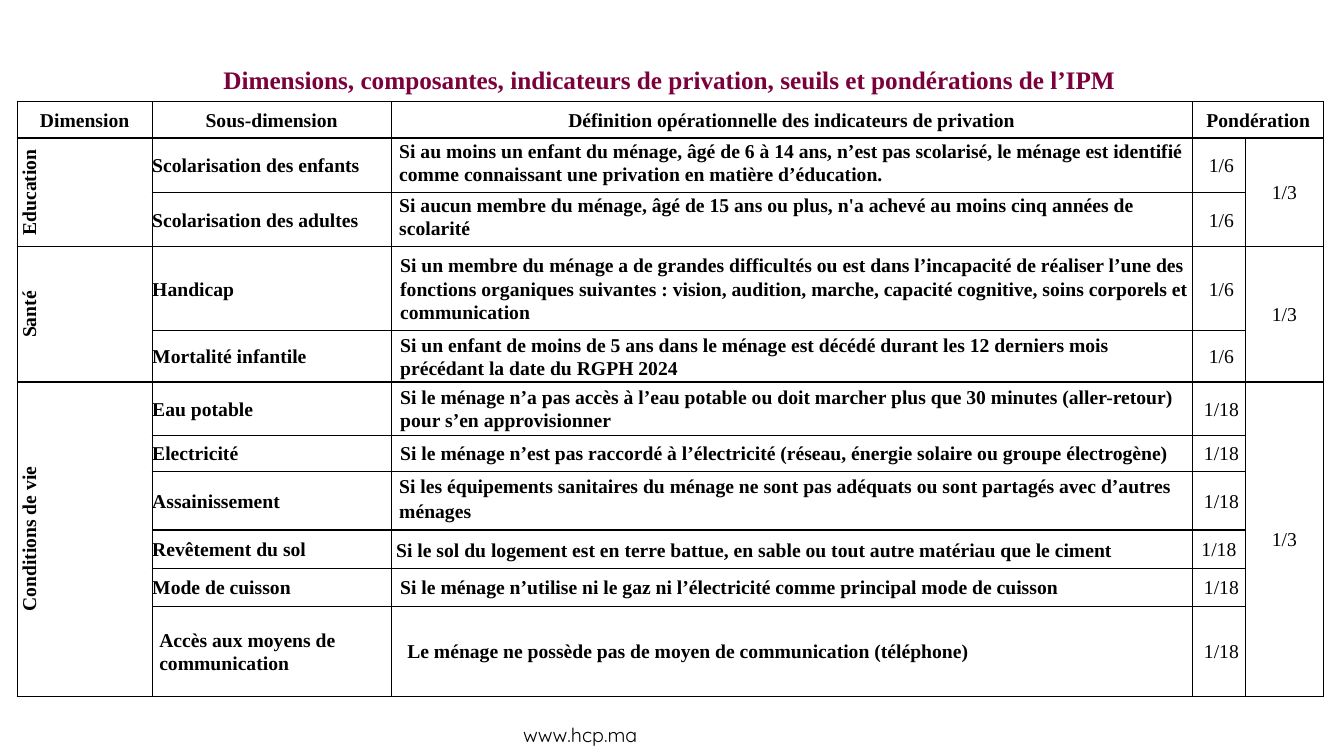
from lxml import etree
from pptx import Presentation
from pptx.dml.color import RGBColor
from pptx.enum.text import MSO_ANCHOR, PP_ALIGN
from pptx.oxml.ns import qn
from pptx.util import Pt

PX = 9144  # 100 px to the inch
LEFT, CENTER = PP_ALIGN.LEFT, PP_ALIGN.CENTER
TOP, MIDDLE = MSO_ANCHOR.TOP, MSO_ANCHOR.MIDDLE
COLORS = {"ink": "000000", "paper": "FFFFFF", "title": "7B003B"}
SERIF, SANS = "Times New Roman", "Quicksand"

COLS = [134, 237, 795, 52, 78]
ROWS = [36, 54, 54, 83, 51, 53, 36, 58, 38, 38, 89]
HEADS = ["Dimension", "Sous-dimension",
         "Définition opérationnelle des indicateurs de privation", "Pondération"]

# Definition cell styles: anchor, margins (left, top, right, bottom), line spacing
HIGH = (TOP, (8, 1, 8, 0), 1.07)
WIDE = (TOP, (8, 1, 8, 0), 1.15)
MID = (MIDDLE, (9, 0, 0, 0), 1.07)
FLOOR = (MIDDLE, (5, 0, 0, 0), 1.15)
LAST = (MIDDLE, (16, 0, 7, 0), 1.07)

# Dimension, weight of each indicator, indicators (name, definition, style)
GROUPS = [
    ("Education", "1/6", [
        ("Scolarisation des enfants",
         "Si au moins un enfant du ménage, âgé de 6 à 14 ans, n’est pas scolarisé, le ménage "
         "est identifié comme connaissant une privation en matière d’éducation.", HIGH),
        ("Scolarisation des adultes",
         "Si aucun membre du ménage, âgé de 15 ans ou plus, n'a achevé au moins cinq années "
         "de scolarité", HIGH),
    ]),
    ("Santé", "1/6", [
        ("Handicap",
         "Si un membre du ménage a de grandes difficultés ou est dans l’incapacité de réaliser "
         "l’une des fonctions organiques suivantes : vision, audition, marche, capacité "
         "cognitive, soins corporels et communication", MID),
        ("Mortalité infantile",
         "Si un enfant de moins de 5 ans dans le ménage est décédé durant les 12 derniers mois "
         "précédant la date du RGPH 2024", MID),
    ]),
    ("Conditions de vie", "1/18", [
        ("Eau potable",
         "Si le ménage n’a pas accès à l’eau potable ou doit marcher plus que 30 minutes "
         "(aller-retour) pour s’en approvisionner", MID),
        ("Electricité",
         "Si le ménage n’est pas raccordé à l’électricité (réseau, énergie solaire ou groupe "
         "électrogène)", MID),
        ("Assainissement",
         "Si les équipements sanitaires du ménage ne sont pas adéquats ou sont partagés avec "
         "d’autres ménages", WIDE),
        ("Revêtement du sol",
         "Si le sol du logement est en terre battue, en sable ou tout autre matériau que le "
         "ciment", FLOOR),
        ("Mode de cuisson",
         "Si le ménage n’utilise ni le gaz ni l’électricité comme principal mode de cuisson",
         MID),
        ("Accès aux moyens de communication",
         "Le ménage ne possède pas de moyen de communication (téléphone)", LAST),
    ]),
]


def style(para, size, face, color, bold, align):
    para.alignment = align
    font = para.font
    font.size, font.name, font.bold = Pt(size), face, bold
    font.color.rgb = RGBColor.from_string(COLORS[color])


def label(slide, box, text, size, face, color, bold, align):
    frame = slide.shapes.add_textbox(*[n * PX for n in box]).text_frame
    frame.word_wrap = True
    frame.vertical_anchor = MIDDLE
    frame.text = text
    style(frame.paragraphs[0], size, face, color, bold, align)


def border(cell):
    props = cell._tc.get_or_add_tcPr()
    for n, side in enumerate(("lnL", "lnR", "lnT", "lnB")):
        line = etree.Element(qn("a:" + side), w=str(Pt(1)))
        fill = etree.SubElement(line, qn("a:solidFill"))
        etree.SubElement(fill, qn("a:srgbClr"), val=COLORS["ink"])
        props.insert(n, line)


def write(cell, text, align=CENTER, bold=True, look=(MIDDLE, (0, 0, 0, 0), 1.07)):
    anchor, pads, space = look
    cell.text = text
    cell.vertical_anchor = anchor
    (cell.margin_left, cell.margin_top,
     cell.margin_right, cell.margin_bottom) = [n * PX for n in pads]
    para = cell.text_frame.paragraphs[0]
    para.line_spacing = space
    style(para, 14, SERIF, "ink", bold, align)


def grid(slide, left, top):
    size = [n * PX for n in (left, top, sum(COLS), sum(ROWS))]
    table = slide.shapes.add_table(len(ROWS), len(COLS), *size).table
    table.first_row = table.horz_banding = False
    for col, width in zip(table.columns, COLS):
        col.width = width * PX
    for row, height in zip(table.rows, ROWS):
        row.height = height * PX
    for cell in table.iter_cells():
        cell.fill.solid()
        cell.fill.fore_color.rgb = RGBColor.from_string(COLORS["paper"])
        border(cell)

    # Header row
    table.cell(0, 3).merge(table.cell(0, 4))
    for n, head in enumerate(HEADS):
        write(table.cell(0, n), head)

    # One block of rows per dimension
    row = 1
    for name, weight, items in GROUPS:
        end = row + len(items) - 1
        for col in (0, 4):
            table.cell(row, col).merge(table.cell(end, col))
        side = table.cell(row, 0)
        write(side, name)
        side._tc.get_or_add_tcPr().set("vert", "vert270")
        write(table.cell(row, 4), "1/3", bold=False)
        for item, rule, look in items:
            pad = 7 if look is LAST else 0
            write(table.cell(row, 1), item, LEFT, look=(MIDDLE, (pad, 0, pad, 0), 1.07))
            write(table.cell(row, 2), rule, LEFT, look=look)
            pad = 0 if look is FLOOR else 5
            write(table.cell(row, 3), weight, bold=False, look=(MIDDLE, (pad, 0, 0, 0), 1.07))
            row += 1


def main():
    deck = Presentation()
    deck.slide_width, deck.slide_height = 1333 * PX, 750 * PX
    slide = deck.slides.add_slide(deck.slide_layouts[6])
    label(slide, (509, 712, 315, 33), "www.hcp.ma", 14, SANS, "ink", False, LEFT)
    label(slide, (89, 57, 1150, 44),
          "Dimensions, composantes, indicateurs de privation, seuils et pondérations de l’IPM",
          18, SERIF, "title", True, CENTER)
    grid(slide, 17, 101)
    deck.save("out.pptx")


if __name__ == "__main__":
    main()
